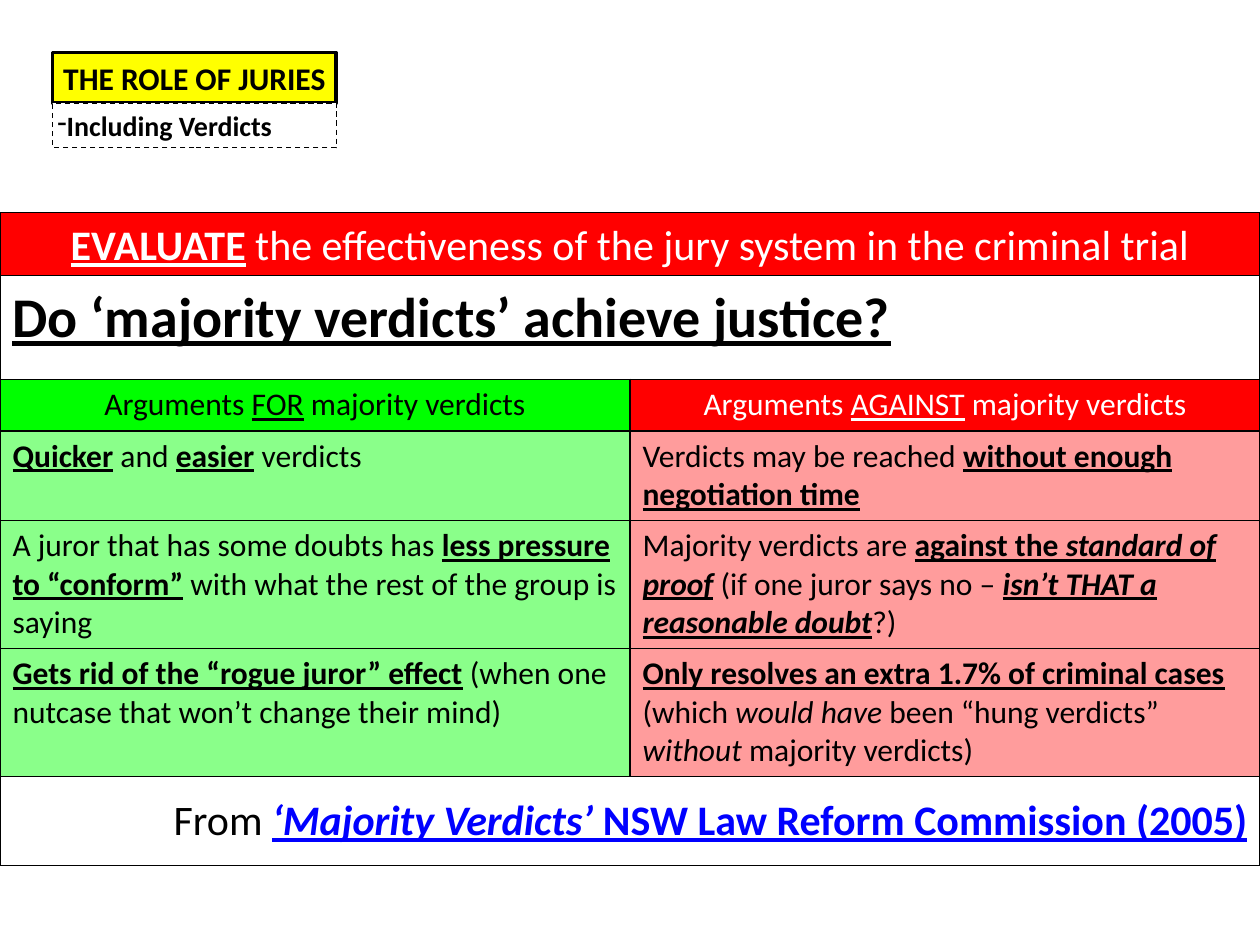
from pptx import Presentation
from pptx import util as u
from pptx.dml.color import RGBColor
from pptx.enum import dml, shapes, text
from pptx.oxml.ns import qn
from lxml import etree

THEME = {
    "font": "Calibri",
    "black": "000000", "white": "FFFFFF", "yellow": "FFFF00",
    "red": "FF0000", "green": "00FF00", "blue": "0000FF",
    "question": 32, "banner": 24, "body": 18, "subtopic": 16,
}
LEFT, RIGHT = text.PP_ALIGN.LEFT, text.PP_ALIGN.RIGHT
CENTER = text.PP_ALIGN.CENTER

TOPIC = [("THE ROLE OF JURIES", "b")]
SUBTOPIC = [("Including Verdicts", "b")]
TASK = [("EVALUATE", "bu"),
        (" the effectiveness of the jury system in the criminal trial", "")]
QUESTION = [("Do ‘majority verdicts’ achieve justice?", "bu")]
SOURCE_LEAD = [("From ", "")]
SOURCE = [("‘Majority Verdicts’ ", "biu"),
          ("NSW Law Reform Commission (2005)", "bu")]

HEADERS = [
    [("Arguments ", ""), ("FOR", "u"), (" majority verdicts", "")],
    [("Arguments ", ""), ("AGAINST", "u"), (" majority verdicts", "")],
]
ARGUMENTS = [
    ([("Quicker", "bu"), (" and ", ""), ("easier", "bu"), (" verdicts", "")],
     [("Verdicts may be reached ", ""),
      ("without enough negotiation time", "bu")]),
    ([("A juror that has some doubts has ", ""),
      ("less pressure to “conform”", "bu"),
      (" with what the rest of the group is saying", "")],
     [("Majority verdicts are ", ""), ("against the ", "bu"),
      ("standard of proof", "biu"), (" ", "i"),
      ("(if one juror says no – ", ""),
      ("isn’t THAT a reasonable doubt", "biu"), ("?)", "")]),
    ([("Gets rid of the “rogue juror” effect", "bu"),
      (" (when one nutcase that won’t change their mind)", "")],
     [("Only resolves an extra 1.7% of criminal cases", "bu"),
      (" (which ", ""), ("would have ", "i"), ("been “hung verdicts” ", ""),
      ("without", "i"), (" majority verdicts)", "")]),
]
COLUMNS = [("green", "black", 46), ("red", "white", 39)]
ROW_HEIGHTS = [1.04, 1.78, 2.54, 2.54]
WIDTH = 25.4


def rgb(name):
    return RGBColor.from_string(THEME[name])


def add_runs(p, runs, size, color="black", align=LEFT):
    p.alignment = align
    for words, style in runs:
        r = p.add_run()
        r.text = words
        f = r.font
        f.name, f.size = THEME["font"], u.Pt(THEME[size])
        f.color.rgb = rgb(color)
        f.bold, f.italic, f.underline = (k in style for k in "biu")


def add_box(slide, at, fill=None, line=0.75, inset=None,
            anchor=text.MSO_ANCHOR.TOP):
    s = slide.shapes.add_shape(shapes.MSO_SHAPE.RECTANGLE, *map(u.Cm, at))
    s.shadow.inherit = False
    if fill:
        s.fill.solid()
        s.fill.fore_color.rgb = rgb(fill)
    else:
        s.fill.background()
    s.line.color.rgb = rgb("black")
    s.line.width = u.Pt(line)
    tf = s.text_frame
    tf.word_wrap = True
    tf.vertical_anchor = anchor
    if inset is not None:
        tf.margin_left = tf.margin_right = u.Cm(inset)
    return s


def style_cell(cell, fill, alpha=100):
    pr = cell._tc.get_or_add_tcPr()
    for side in ("lnL", "lnR", "lnT", "lnB"):
        ln = etree.SubElement(pr, qn("a:" + side), w=str(u.Pt(1)))
        solid = etree.SubElement(ln, qn("a:solidFill"))
        etree.SubElement(solid, qn("a:srgbClr"), val=THEME["black"])
    cell.fill.solid()
    cell.fill.fore_color.rgb = rgb(fill)
    if alpha < 100:
        clr = pr.find(qn("a:solidFill")).find(qn("a:srgbClr"))
        etree.SubElement(clr, qn("a:alpha"), val=str(alpha * 1000))


def add_arguments(slide):
    rows = [HEADERS, *ARGUMENTS]
    table = slide.shapes.add_table(
        len(rows), len(COLUMNS), 0, u.Cm(7.65),
        u.Cm(WIDTH), u.Cm(sum(ROW_HEIGHTS))).table
    table.first_row = table.horz_banding = False
    for i, (row, height) in enumerate(zip(rows, ROW_HEIGHTS)):
        table.rows[i].height = u.Cm(height)
        for j, (runs, (fill, head_color, alpha)) in enumerate(zip(row, COLUMNS)):
            cell = table.cell(i, j)
            p = cell.text_frame.paragraphs[0]
            if i == 0:
                style_cell(cell, fill)
                add_runs(p, runs, "body", head_color, CENTER)
            else:
                style_cell(cell, fill, alpha)
                add_runs(p, runs, "body")


def main():
    prs = Presentation()
    prs.slide_width, prs.slide_height = u.Cm(WIDTH), u.Cm(19.05)
    slide = prs.slides.add_slide(prs.slide_layouts[6])
    middle = text.MSO_ANCHOR.MIDDLE

    panel = add_box(slide, (0, 5.56, WIDTH, 11.89))
    tf = panel.text_frame
    add_runs(tf.paragraphs[0], QUESTION, "question")
    p = tf.add_paragraph()
    p.space_before = u.Pt(254)
    add_runs(p, SOURCE_LEAD, "banner", align=RIGHT)
    add_runs(p, SOURCE, "banner", "blue", RIGHT)

    topic = add_box(slide, (1.06, 1.06, 5.72, 1.02), "yellow", 2, 0.1, middle)
    add_runs(topic.text_frame.paragraphs[0], TOPIC, "body", align=CENTER)

    subtopic = add_box(slide, (1.06, 2.08, 5.72, 0.9), "white", 0.75, 0.1, middle)
    subtopic.line.dash_style = dml.MSO_LINE.DASH
    p = subtopic.text_frame.paragraphs[0]
    add_runs(p, SUBTOPIC, "subtopic")
    etree.SubElement(p._p.get_or_add_pPr(), qn("a:buChar"), char="-")

    add_arguments(slide)

    banner = add_box(slide, (0, 4.28, WIDTH, 1.28), "red", anchor=middle)
    add_runs(banner.text_frame.paragraphs[0], TASK, "banner", "white", CENTER)

    prs.save("out.pptx")


if __name__ == "__main__":
    main()
